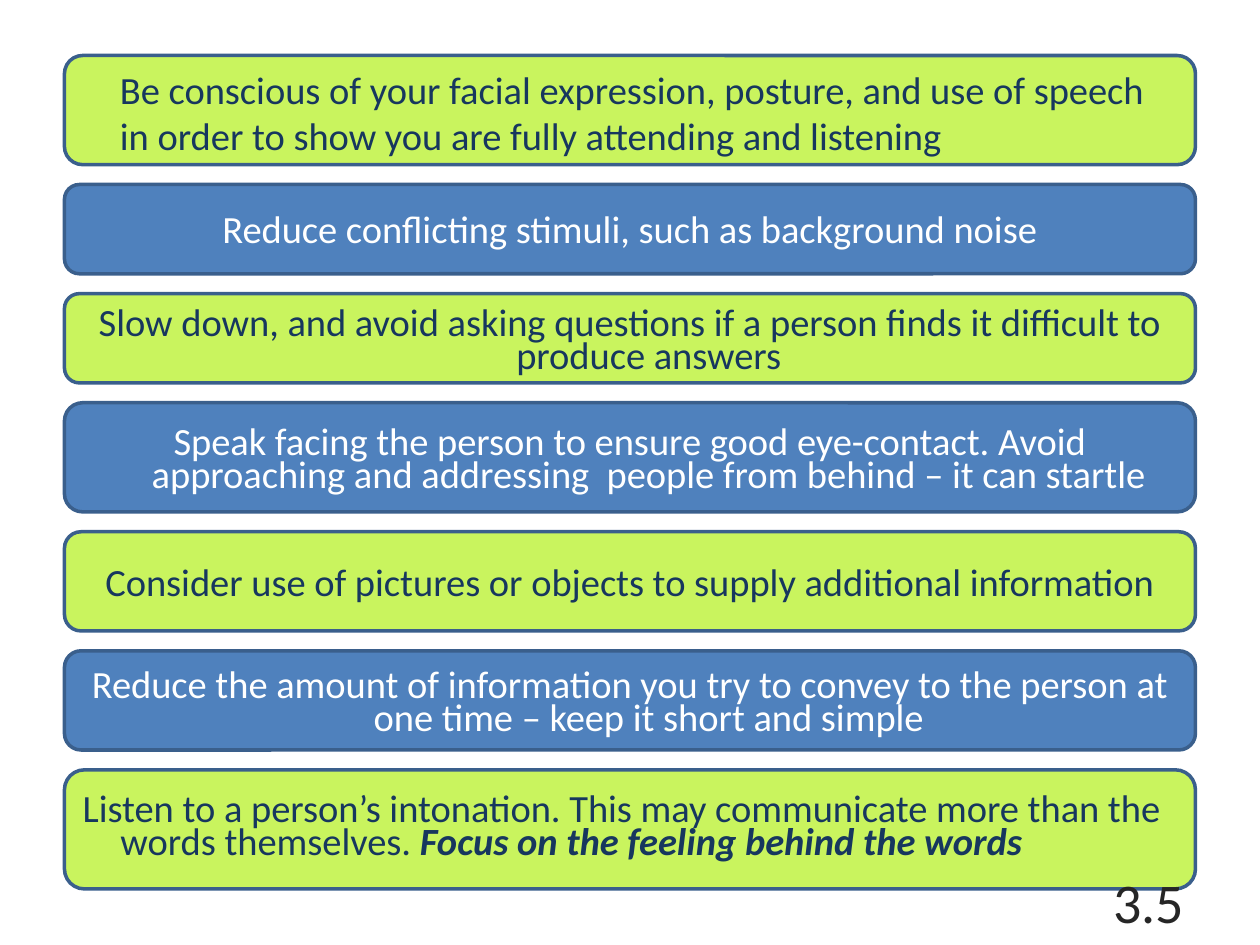
from lxml import etree
from pptx import Presentation
from pptx import util as u
from pptx.dml.color import RGBColor
from pptx.enum import shapes, text

COLORS = {"blue": "4F81BD", "lime": "C9F45E", "border": "3A5F8C",
          "navy": "17375E", "white": "FFFFFF", "gray": "262626"}
CELL = u.Mm(2)  # the slide is 127 columns wide
COLUMNS = 127
MARGIN = 6.5
FIRST_ROW = 5.6
GAP = 2
LEFT, CENTER, RIGHT = (text.PP_ALIGN.LEFT, text.PP_ALIGN.CENTER,
                       text.PP_ALIGN.RIGHT)


class TipSlide:
    font = "Calibri"

    def __init__(self, deck):
        self.slide = deck.slides.add_slide(deck.slide_layouts[6])

    def color(self, name):
        return RGBColor.from_string(COLORS[name])

    def box(self, *cells):
        return [round(n * CELL) for n in cells]

    def style_run(self, run, size, color, strong=False):
        run.font.name = self.font
        run.font.size = u.Pt(size)
        run.font.color.rgb = self.color(color)
        if strong:
            run.font.bold = run.font.italic = True

    def bar(self, row, rows, fill, ink, tip, emphasis="", align=CENTER,
            spacing=0.7, hanging=True, drop=0.08):
        """A rounded bar; drop lowers its text a little, in inches."""
        bar = self.slide.shapes.add_shape(
            shapes.MSO_SHAPE.ROUNDED_RECTANGLE,
            *self.box(MARGIN, row, COLUMNS - 2 * MARGIN, rows))
        bar.shadow.inherit = False
        bar.fill.solid()
        bar.fill.fore_color.rgb = self.color(fill)
        bar.line.color.rgb = self.color("border")
        bar.line.width = u.Pt(2)

        frame = bar.text_frame
        frame.word_wrap = True
        frame.vertical_anchor = text.MSO_ANCHOR.MIDDLE
        frame.margin_top = u.Inches(0.05 + drop)
        frame.text = tip
        paragraph = frame.paragraphs[0]
        paragraph.alignment = align
        paragraph.line_spacing = spacing
        indent = u.Inches(0.3)
        properties = paragraph._p.get_or_add_pPr()
        properties.set("marL", str(indent))
        properties.set("indent", str(-indent if hanging else 0))
        self.style_run(paragraph.runs[0], 22, ink)
        if emphasis:
            strong = paragraph.add_run()
            strong.text = emphasis
            self.style_run(strong, 22, ink, strong=True)

    def page_number(self, number):
        label = self.slide.shapes.add_textbox(*self.box(91, 88.3, 29.6, 5.1))
        frame = label.text_frame
        frame.word_wrap = True
        frame.vertical_anchor = text.MSO_ANCHOR.MIDDLE
        frame.text = number
        frame.paragraphs[0].alignment = RIGHT
        self.style_run(frame.paragraphs[0].runs[0], 32, "gray")


# Height in rows, wording, and what differs from the usual bar
TIPS = [
    (11, "Be conscious of your facial expression, posture, and use of speech "
         "in order to show you are fully attending and listening",
     {"align": LEFT, "spacing": 1.0, "hanging": False, "drop": 0.03}),
    (9, "Reduce conflicting stimuli, such as background noise", {}),
    (9, "Slow down, and avoid asking questions if a person finds it difficult "
        "to produce answers", {}),
    (11, "Speak facing the person to ensure good eye-contact. Avoid approaching "
         "and addressing  people from behind – it can startle", {}),
    (10, "Consider use of pictures or objects to supply additional information",
     {}),
    (10, "Reduce the amount of information you try to convey to the person at "
         "one time – keep it short and simple", {}),
    (12, "Listen to a person’s intonation. This may communicate more than the "
         "words themselves. ",
     {"emphasis": "Focus on the feeling behind the words", "align": LEFT,
      "drop": 0}),
]


def main():
    deck = Presentation()
    deck.slide_width, deck.slide_height = u.Inches(10), u.Inches(7.5)
    page = TipSlide(deck)

    # Bars of alternating colour, one below the other
    row = FIRST_ROW
    for index, (rows, tip, options) in enumerate(TIPS):
        fill, ink = [("lime", "navy"), ("blue", "white")][index % 2]
        page.bar(row, rows, fill, ink, tip, **options)
        row += rows + GAP

    # Page number
    page.page_number("3.5")
    deck.save("out.pptx")


if __name__ == "__main__":
    main()
